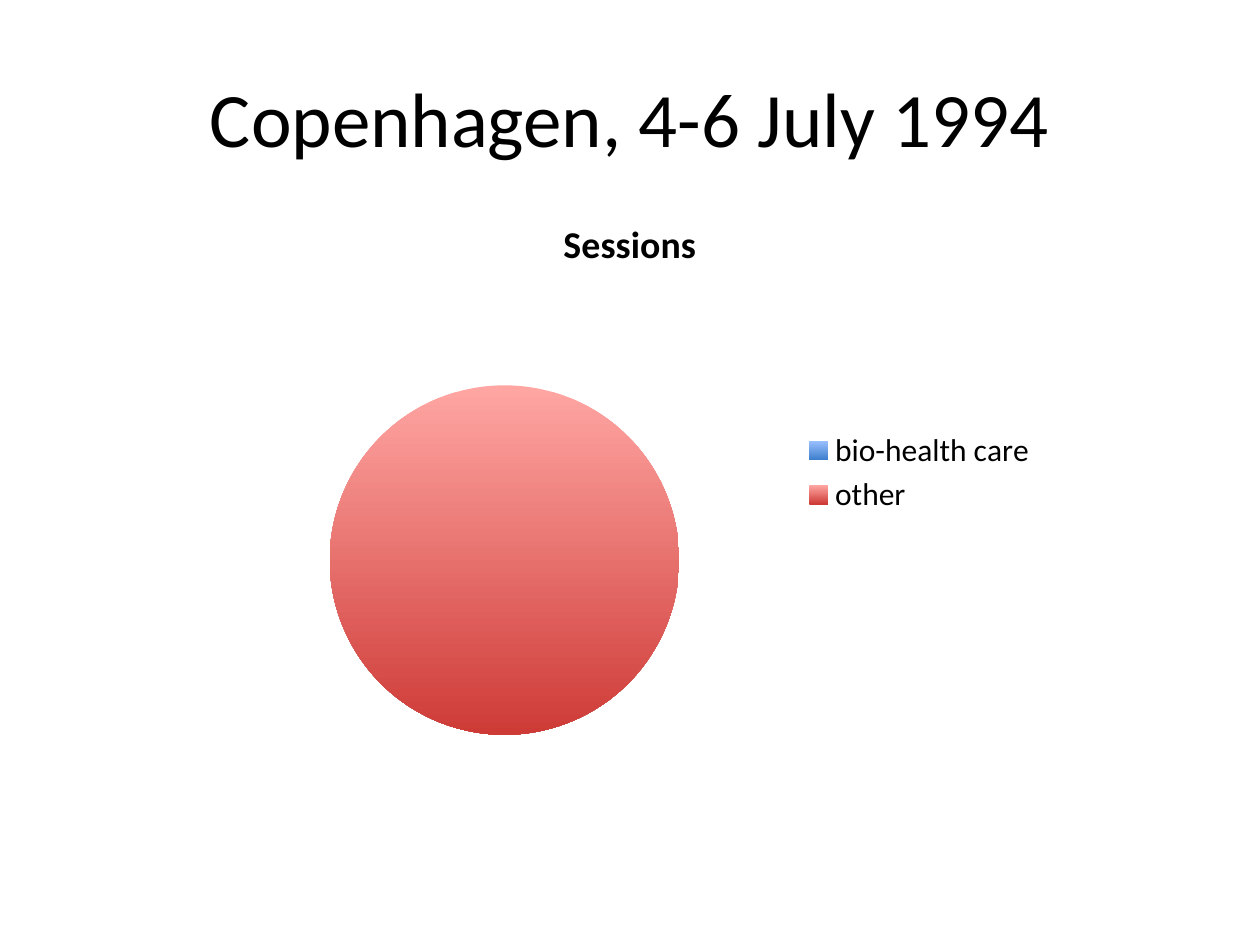
from dataclasses import dataclass

from lxml.etree import QName
from pptx import Presentation
from pptx.chart.data import CategoryChartData
from pptx.chart.chart import Chart
from pptx.dml.color import RGBColor
from pptx.enum.chart import XL_CHART_TYPE, XL_LEGEND_POSITION
from pptx.enum.text import MSO_ANCHOR, PP_ALIGN
from pptx.oxml import parse_xml
from pptx.oxml.ns import nsdecls
from pptx.slide import Slide
from pptx.text.text import Font
from pptx.util import Inches, Pt

FONT = "Calibri"
COLORS = {
    "text": "000000",
    "blue_light": "9BC1FF",
    "blue_dark": "3F80CD",
    "red_light": "FFA6A3",
    "red_dark": "CE3B37",
}
SLIDE_WIDTH, SLIDE_HEIGHT = Inches(10), Inches(7.5)
EXPLOSION = 25


@dataclass
class Box:
    """A frame given as shares of the slide's width and height."""
    left: float
    top: float
    width: float
    height: float

    def lengths(self) -> tuple[int, int, int, int]:
        return (int(self.left * SLIDE_WIDTH), int(self.top * SLIDE_HEIGHT),
                int(self.width * SLIDE_WIDTH), int(self.height * SLIDE_HEIGHT))


@dataclass
class Slice:
    label: str
    value: int
    hue: str


TITLE_BOX = Box(0.05, 0.04, 0.9, 1 / 6)
CHART_BOX = Box(1 / 6, 0.204, 2 / 3, 0.592)
SLICES = [Slice("bio-health care", 0, "blue"), Slice("other", 100, "red")]


def style_font(font: Font, size: float, bold: bool = False) -> None:
    font.name = FONT
    font.size = Pt(size)
    font.bold = bold
    font.color.rgb = RGBColor.from_string(COLORS["text"])


def add_title(slide: Slide, text: str) -> None:
    title = slide.shapes.title
    title.left, title.top, title.width, title.height = TITLE_BOX.lengths()
    title.text_frame.vertical_anchor = MSO_ANCHOR.MIDDLE
    paragraph = title.text_frame.paragraphs[0]
    paragraph.alignment = PP_ALIGN.CENTER
    run = paragraph.add_run()
    run.text = text
    style_font(run.font, 44)


def color_slices(chart: Chart) -> None:
    series = chart.plots[0].series[0]
    for index, part in enumerate(SLICES):
        fill = series.points[index].format.fill
        fill.gradient()
        fill.gradient_angle = 270
        for stop, shade in zip(fill.gradient_stops, ("light", "dark")):
            stop.color.rgb = RGBColor.from_string(COLORS[f"{part.hue}_{shade}"])

    # The explosion element must come before the data points
    first_point = next(child for child in series._element
                       if QName(child).localname == "dPt")
    first_point.addprevious(
        parse_xml(f'<c:explosion {nsdecls("c")} val="{EXPLOSION}"/>'))


def add_pie(slide: Slide, name: str) -> None:
    data = CategoryChartData()
    data.categories = [part.label for part in SLICES]
    data.add_series(name, [part.value for part in SLICES])
    chart = slide.shapes.add_chart(
        XL_CHART_TYPE.PIE, *CHART_BOX.lengths(), data).chart
    style_font(chart.font, 18)
    chart.plots[0].vary_by_categories = True

    # Chart title
    chart.has_title = True
    chart.chart_title.include_in_layout = False
    run = chart.chart_title.text_frame.paragraphs[0].add_run()
    run.text = name
    style_font(run.font, 21.6, bold=True)

    # Legend
    chart.has_legend = True
    chart.legend.position = XL_LEGEND_POSITION.RIGHT
    chart.legend.include_in_layout = False
    style_font(chart.legend.font, 18)

    color_slices(chart)


def main() -> None:
    presentation = Presentation()
    presentation.slide_width = SLIDE_WIDTH
    presentation.slide_height = SLIDE_HEIGHT
    title_only = presentation.slide_layouts[5]
    slide = presentation.slides.add_slide(title_only)
    add_title(slide, "Copenhagen, 4-6 July 1994")
    add_pie(slide, "Sessions")
    presentation.save("out.pptx")


if __name__ == "__main__":
    main()
